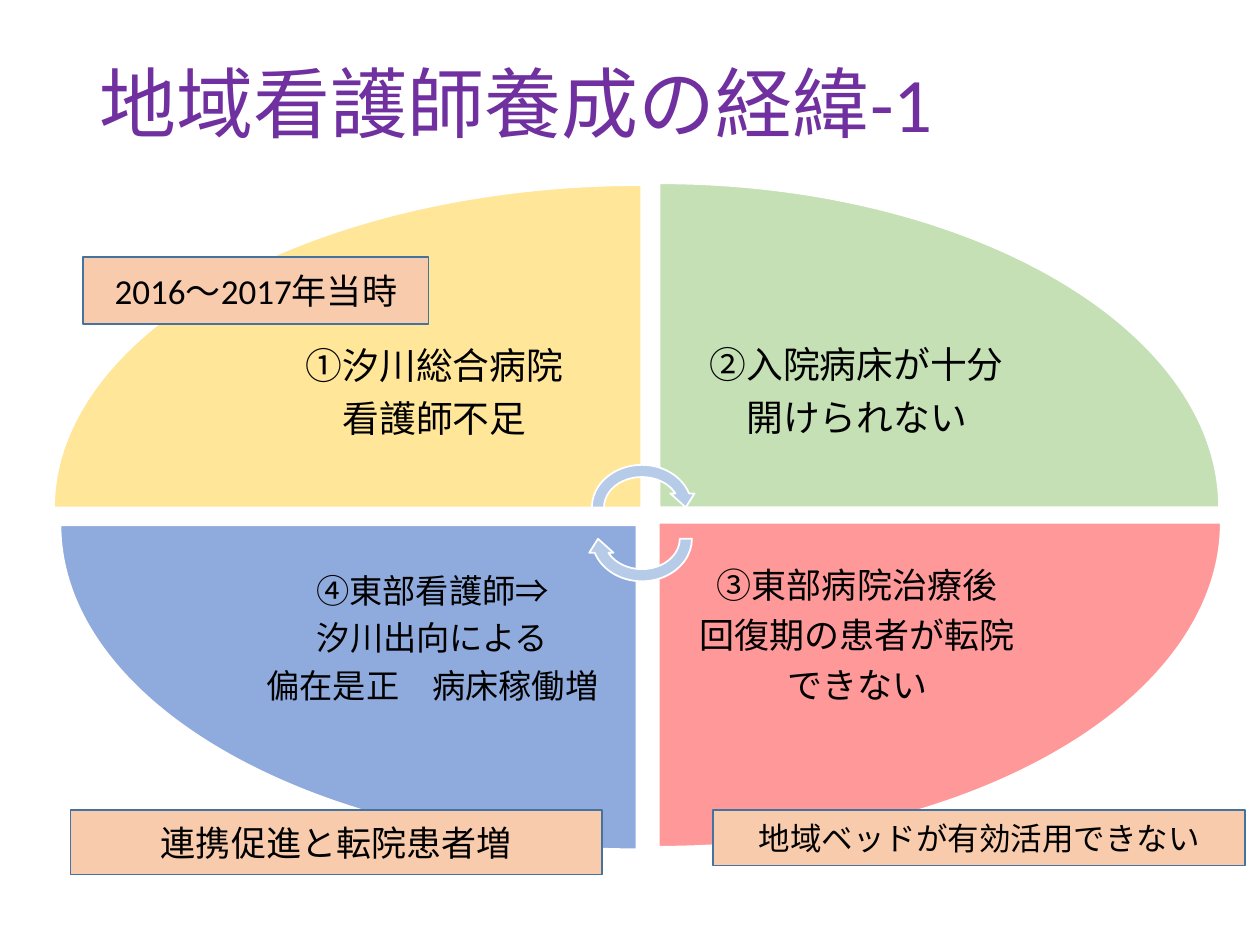
"""Build the slide on how the community nurse programme came about."""
import dataclasses

import pptx
import pptx.dml.color
import pptx.enum.shapes
import pptx.enum.text
import pptx.oxml.ns
import pptx.util
from lxml import etree

Cm = pptx.util.Cm
Pt = pptx.util.Pt
SHAPE = pptx.enum.shapes.MSO_SHAPE
ALIGN = pptx.enum.text.PP_ALIGN
MIDDLE = pptx.enum.text.MSO_ANCHOR.MIDDLE


@dataclasses.dataclass(frozen=True)
class Theme:
    """Colours, font and type sizes of the slide."""

    font: str = "Calibri"
    title: str = "7030A0"
    text: str = "000000"
    gap: str = "FFFFFF"
    yellow: str = "FFE699"
    green: str = "C5E0B4"
    red: str = "FF9999"
    blue: str = "8FAADC"
    arrow: str = "B5CBE7"
    label: str = "F8CBAD"
    label_line: str = "43739E"
    title_size: int = 44
    label_size: int = 20
    small_label_size: int = 18


THEME = Theme()

QUADRANTS = [
    ((1.09, 3.73, 11.84, 6.5), 0, THEME.yellow,
     (4.57, 5.64, 8.38, 4.6), 21, ["①汐川総合病院", "看護師不足"]),
    ((15.67, 1.32, 6.53, 11.28), 90, THEME.green,
     (13.28, 5.61, 7.98, 4.62), 21, ["②入院病床が十分", "開けられない"]),
    ((13.28, 10.54, 11.33, 6.53), 180, THEME.red,
     (13.28, 10.54, 8, 4.62), 20,
     ["③東部病院治療後", "回復期の患者が転院", "できない"]),
    ((3.76, 8.05, 6.53, 11.61), 270, THEME.blue,
     (4.62, 10.59, 8.2, 4.62), 19,
     ["④東部看護師⇒", "汐川出向による", "偏在是正　病床稼働増"]),
]

ARROWS = [((11.81, 9.25, 2.26, 1.96), 0), ((11.81, 9.88, 2.26, 1.96), 180)]

LABELS = [
    ((1.68, 5.18, 6.96, 1.35), "2016～2017年当時", THEME.label_size),
    ((14.38, 16.33, 10.72, 1.12), "地域ベッドが有効活用できない",
     THEME.small_label_size),
    ((1.42, 16.33, 10.72, 1.3), "連携促進と転院患者増", THEME.label_size),
]


def rgb(value):
    """Return the colour for a hex string."""
    return pptx.dml.color.RGBColor.from_string(value)


def lengths(box):
    """Return a box given in centimetres as lengths."""
    return [Cm(v) for v in box]


def format_text(tf, size, color, align):
    """Centre the text vertically and format every paragraph and run."""
    tf.word_wrap = True
    tf.vertical_anchor = MIDDLE
    for p in tf.paragraphs:
        p.alignment = align
        for r in p.runs:
            r.font.name = THEME.font
            r.font.size = Pt(size)
            r.font.color.rgb = rgb(color)


def set_title(s, text):
    """Place and format the title placeholder."""
    sp = s.shapes.title
    sp.left, sp.top, sp.width, sp.height = lengths((1.75, 1.02, 21.89, 2.31))
    tf = sp.text_frame
    tf.text = text
    format_text(tf, THEME.title_size, THEME.title, ALIGN.LEFT)
    tf.paragraphs[0].line_spacing = 0.9


def add_shape(s, kind, box, fill, line, rotation=0):
    """Add a flat preset shape with a thin outline."""
    sp = s.shapes.add_shape(kind, *lengths(box))
    sp.rotation = rotation
    sp.shadow.inherit = False
    sp.fill.solid()
    sp.fill.fore_color.rgb = rgb(fill)
    sp.line.color.rgb = rgb(line)
    sp.line.width = Pt(1)
    return sp


def set_space_after(p, percent):
    """Set the space after a paragraph relative to its type size."""
    qn = pptx.oxml.ns.qn
    space = etree.SubElement(p._p.get_or_add_pPr(), qn("a:spcAft"))
    etree.SubElement(space, qn("a:spcPct"), val=str(percent * 1000))


def add_quadrant_text(s, box, size, lines):
    """Add the centred lines of one quadrant."""
    tf = s.shapes.add_textbox(*lengths(box)).text_frame
    tf.text = "\n".join(lines)
    tf.margin_left = tf.margin_right = tf.margin_top = tf.margin_bottom = Cm(0.4)
    format_text(tf, size, THEME.text, ALIGN.CENTER)
    for p in tf.paragraphs:
        p.line_spacing = 0.9
        set_space_after(p, 35)


def add_label(s, box, text, size):
    """Add a boxed label."""
    sp = add_shape(s, SHAPE.RECTANGLE, box, THEME.label, THEME.label_line)
    sp.text_frame.text = text
    format_text(sp.text_frame, size, THEME.text, ALIGN.CENTER)


def main():
    """Build and save the slide."""
    prs = pptx.Presentation()
    prs.slide_width, prs.slide_height = Cm(25.4), Cm(19.05)
    s = prs.slides.add_slide(prs.slide_layouts[5])
    set_title(s, "地域看護師養成の経緯-1")
    for wedge, rotation, fill, box, size, lines in QUADRANTS:
        add_shape(s, SHAPE.PIE_WEDGE, wedge, fill, THEME.gap, rotation)
        add_quadrant_text(s, box, size, lines)
    for box, rotation in ARROWS:
        add_shape(s, SHAPE.CIRCULAR_ARROW, box, THEME.arrow, THEME.gap, rotation)
    for box, text, size in LABELS:
        add_label(s, box, text, size)
    prs.save("out.pptx")


if __name__ == "__main__":
    main()
